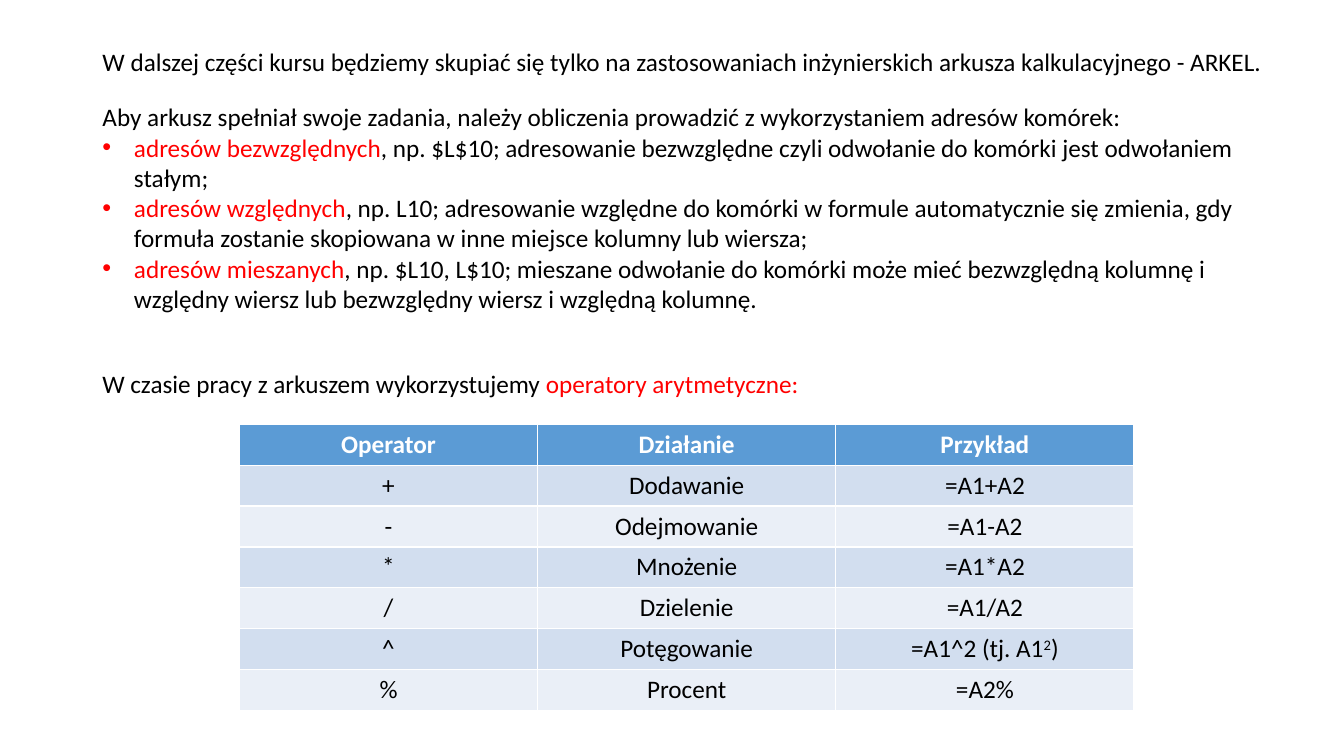
from lxml import etree
from pptx import Presentation
from pptx.dml.color import RGBColor
from pptx.enum.text import MSO_ANCHOR, MSO_AUTO_SIZE, PP_ALIGN
from pptx.oxml.ns import qn
from pptx.util import Pt

PX = 9525
FONT = "Calibri"
BLACK = RGBColor(0x00, 0x00, 0x00)
RED = RGBColor(0xFF, 0x00, 0x00)
WHITE = RGBColor(0xFF, 0xFF, 0xFF)
HEADER_BLUE = RGBColor(0x5B, 0x9B, 0xD5)
BANDS = (RGBColor(0xEA, 0xEF, 0xF7), RGBColor(0xD2, 0xDE, 0xEF))
LEFT, CENTER = PP_ALIGN.LEFT, PP_ALIGN.CENTER
TOP = MSO_ANCHOR.TOP
NO_AUTOFIT = MSO_AUTO_SIZE.NONE

LEFT_EDGE = 88
BULLET_INDENT = 30
COLUMN_WIDTH, ROW_HEIGHT = 284, 39

ADDRESS_KINDS = [
    ("adresów bezwzględnych",
     ", np. $L$10; adresowanie bezwzględne czyli odwołanie do komórki jest odwołaniem stałym;"),
    ("adresów względnych",
     ", np. L10; adresowanie względne do komórki w formule automatycznie się zmienia, "
     "gdy formuła zostanie skopiowana w inne miejsce kolumny lub wiersza;"),
    ("adresów mieszanych",
     ", np. $L10, L$10; mieszane odwołanie do komórki może mieć bezwzględną kolumnę "
     "i względny wiersz lub bezwzględny wiersz i względną kolumnę."),
]
OPERATORS = [
    ("Operator", "Działanie", "Przykład"),
    ("+", "Dodawanie", "=A1+A2"),
    ("-", "Odejmowanie", "=A1-A2"),
    ("*", "Mnożenie", "=A1*A2"),
    ("/", "Dzielenie", "=A1/A2"),
    ("^", "Potęgowanie", "=A1^2 (tj. A1"),
    ("%", "Procent", "=A2%"),
]


def place(shape, top, width, height):
    shape.left, shape.top = LEFT_EDGE * PX, top * PX
    shape.width, shape.height = width * PX, height * PX
    shape.text_frame.auto_size = NO_AUTOFIT
    shape.text_frame.vertical_anchor = TOP


def write(paragraph, runs, align=LEFT, bold=False):
    """Fill a paragraph with (text, colour) runs in the slide's common font."""
    paragraph.alignment = align
    paragraph.space_before = Pt(0)
    paragraph.font.name = FONT
    paragraph.font.size = Pt(18)
    paragraph.font.bold = bold
    for text, color in runs:
        run = paragraph.add_run()
        run.text = text
        run.font.color.rgb = color


prs = Presentation()
prs.slide_width, prs.slide_height = 1280 * PX, 720 * PX
slide = prs.slides.add_slide(prs.slide_layouts[1])

# Opening sentence
intro = slide.shapes.title
place(intro, 39, 1132, 38)
write(intro.text_frame.paragraphs[0], [(
    "W dalszej części kursu będziemy skupiać się tylko na zastosowaniach "
    "inżynierskich arkusza kalkulacyjnego - ARKEL.", BLACK)])

# Kinds of cell address
addresses = slide.placeholders[1]
place(addresses, 92, 1104, 213)
lead = addresses.text_frame.paragraphs[0]
write(lead, [("Aby arkusz spełniał swoje zadania, należy obliczenia prowadzić "
              "z wykorzystaniem adresów komórek:", BLACK)])
lead_props = lead._p.get_or_add_pPr()
lead_props.set("marL", "0")
lead_props.set("indent", "0")
etree.SubElement(lead_props, qn("a:buNone"))
lead_props.append(lead_props.find(qn("a:defRPr")))

for kind, explanation in ADDRESS_KINDS:
    item = addresses.text_frame.add_paragraph()
    write(item, [(kind, RED), (explanation, BLACK)])
    item_props = item._p.get_or_add_pPr()
    item_props.set("marL", str(BULLET_INDENT * PX))
    item_props.set("indent", str(-BULLET_INDENT * PX))

# Arithmetic operators
operators_lead = slide.shapes.add_textbox(0, 0, 0, 0)
place(operators_lead, 346, 689, 38)
operators_lead.text_frame.word_wrap = False
write(operators_lead.text_frame.paragraphs[0],
      [("W czasie pracy z arkuszem wykorzystujemy ", BLACK),
       ("operatory arytmetyczne:", RED)])

rows, columns = len(OPERATORS), len(OPERATORS[0])
operators = slide.shapes.add_table(
    rows, columns, 228 * PX, 404 * PX,
    columns * COLUMN_WIDTH * PX, rows * ROW_HEIGHT * PX).table
for r, entries in enumerate(OPERATORS):
    is_header = r == 0
    for c, entry in enumerate(entries):
        cell = operators.cell(r, c)
        cell.fill.solid()
        cell.fill.fore_color.rgb = HEADER_BLUE if is_header else BANDS[r % 2]
        write(cell.text_frame.paragraphs[0],
              [(entry, WHITE if is_header else BLACK)], CENTER, is_header)

power_example = operators.cell(5, 2).text_frame.paragraphs[0]
write(power_example, [("2", BLACK), (")", BLACK)], CENTER)
power_example.runs[1].font._element.set("baseline", "30000")

prs.save("out.pptx")
